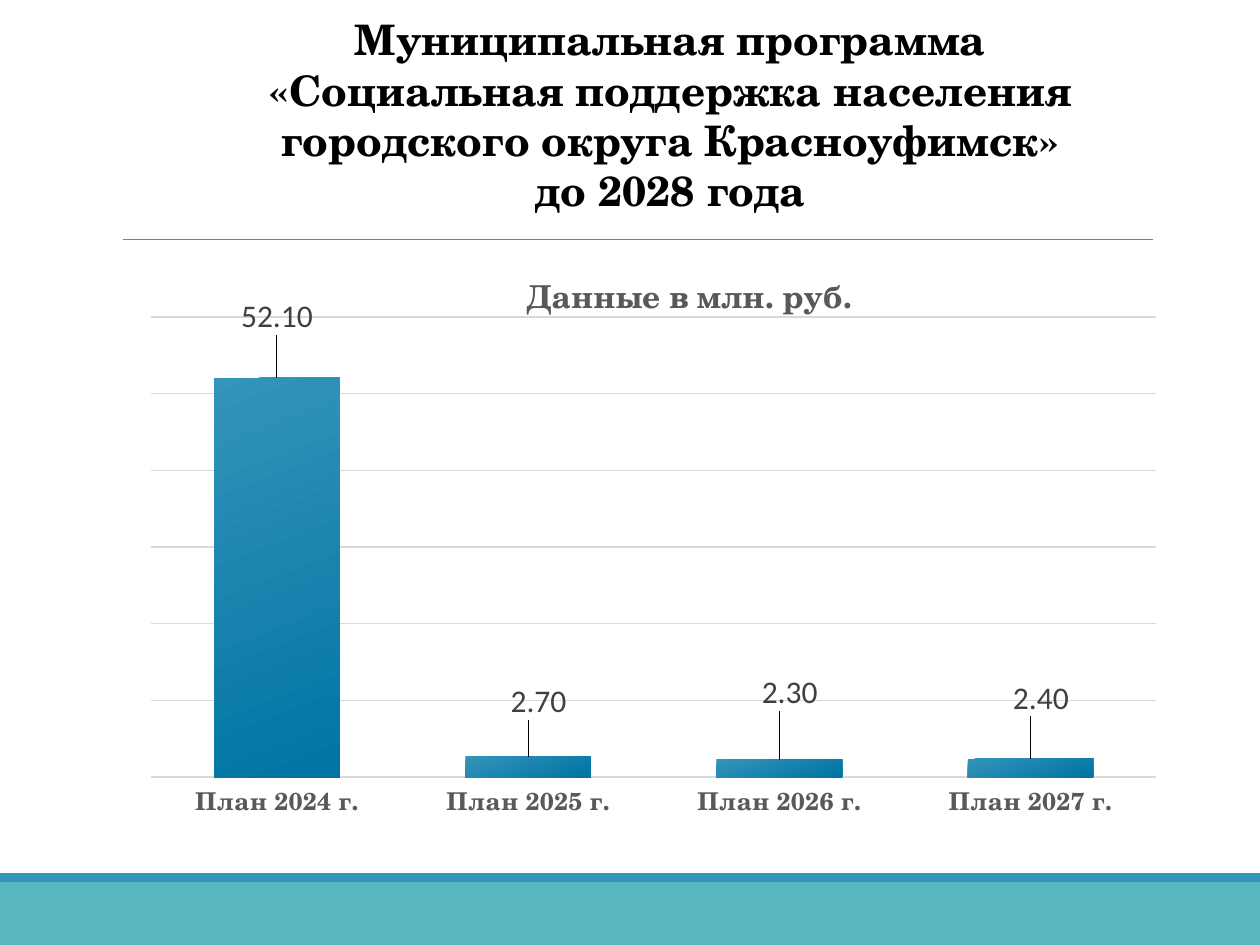
"""Build the social support programme slide with its spending chart."""
from lxml.etree import SubElement
from pptx import Presentation
from pptx.chart.data import CategoryChartData
from pptx.dml.color import RGBColor
from pptx.enum.chart import XL_CHART_TYPE as ChartType, XL_LABEL_POSITION as LabelPosition
from pptx.enum.chart import XL_TICK_MARK as TickMark
from pptx.enum.shapes import MSO_CONNECTOR as Connector, MSO_SHAPE as Shape
from pptx.enum.text import MSO_ANCHOR as Anchor, PP_ALIGN as Align
from pptx.oxml import parse_xml
from pptx.oxml.ns import nsdecls, qn
from pptx.util import Pt

TITLE = [
    "Муниципальная программа",
    "«Социальная поддержка населения",
    "городского округа Красноуфимск»",
    "до 2028 года",
]
CHART_TITLE = "Данные в млн. руб."
SPENDING = [
    ("План 2024 г.", 52.1, (0, -0.06)),
    ("План 2025 г.", 2.7, (0.01, -0.05)),
    ("План 2026 г.", 2.3, (0.01, -0.07)),
    ("План 2027 г.", 2.4, (0.01, -0.06)),
]
NUMBER_FORMAT = "#,##0.00"
THEME = {
    "serif": "TeX Gyre Schola", "sans": "Calibri",
    "black": "000000", "gray": "595959", "label": "404040",
    "grid": "D9D9D9", "rule": "808080", "band": "58B6C0",
    "blue": "3494BA", "deep_blue": "0074A3",
    "title_size": 24, "chart_title_size": 18, "label_size": 18,
    "axis_size": 14, "chart_size": 10,
}
BANDS = [((0, 882, 1260, 63), "band"), ((0, 873, 1260, 9), "blue")]
TITLE_BOX = (184, 6, 973, 217)
CHART_BOX = (115, 244, 1042, 615)
RULE = (123, 239, 1153, 239)
PLOT_AREA = (0.035, 0.119, 0.965, 0.748)
EMU_PER_PX = 914400 / 126


def px(*lengths):
    return [round(length * EMU_PER_PX) for length in lengths]


def color(name):
    return RGBColor.from_string(THEME[name])


def style(font, face, size, color_name, bold=False):
    font.name = THEME[face]
    font.size = Pt(THEME[size])
    font.color.rgb = color(color_name)
    font.bold = bold


def style_line(line, color_name, width):
    line.color.rgb = color(color_name)
    line.width = Pt(width)


def manual_layout(x, y, width=None, height=None):
    layout = parse_xml(f"<c:layout {nsdecls('c')}><c:manualLayout/></c:layout>")
    settings = [("x", x), ("y", y)]
    if width:
        settings = [("layoutTarget", "inner"), ("xMode", "edge"), ("yMode", "edge"),
                    *settings, ("w", width), ("h", height)]
    for tag, value in settings:
        SubElement(layout[0], qn(f"c:{tag}")).set("val", str(value))
    return layout


def edge_layout(x, y):
    layout = manual_layout(x, y)
    for position, tag in enumerate(("xMode", "yMode")):
        mode = SubElement(layout[0], qn(f"c:{tag}"))
        mode.set("val", "edge")
        layout[0].insert(position, mode)
    return layout


def replace_layout(parent, layout, following):
    for old in parent.findall(qn("c:layout")):
        parent.remove(old)
    parent.insert(following, layout)


def add_bands(slide):
    for box, fill in BANDS:
        band = slide.shapes.add_shape(Shape.RECTANGLE, *px(*box))
        band.shadow.inherit = False
        band.fill.solid()
        band.fill.fore_color.rgb = color(fill)
        band.line.fill.background()


def add_rule(slide):
    rule = slide.shapes.add_connector(Connector.STRAIGHT, *px(*RULE))
    style_line(rule.line, "rule", 0.5)
    SubElement(rule.element.spPr, qn("a:effectLst"))


def fill_title(slide):
    title = slide.shapes.title
    title.left, title.top, title.width, title.height = px(*TITLE_BOX)
    frame = title.text_frame
    frame.text = "\n".join(TITLE)
    frame.word_wrap = True
    frame.vertical_anchor = Anchor.MIDDLE
    for paragraph in frame.paragraphs:
        paragraph.alignment = Align.CENTER
        paragraph.space_before = Pt(0)
        style(paragraph.font, "serif", "title_size", "black", True)


def style_axes(chart):
    categories, values = chart.category_axis, chart.value_axis
    categories.major_tick_mark = TickMark.NONE
    style_line(categories.format.line, "grid", 1)
    style(categories.tick_labels.font, "serif", "axis_size", "gray", True)
    values.minimum_scale, values.maximum_scale, values.major_unit = 0, 60, 10
    values.tick_labels.number_format = NUMBER_FORMAT
    values.tick_labels.number_format_is_linked = False
    style_line(values.major_gridlines.format.line, "grid", 0.75)
    values.visible = False


def style_series(plot):
    plot.gap_width, plot.overlap, plot.vary_by_categories = 100, -24, False
    series = plot.series[0]
    fill = series.format.fill
    fill.gradient()
    fill.gradient_angle = 291
    for stop, name in zip(fill.gradient_stops, ("blue", "deep_blue")):
        stop.color.rgb = color(name)
    labels = series.data_labels
    labels.show_value = True
    labels.number_format = NUMBER_FORMAT
    labels.number_format_is_linked = False
    style(labels.font, "sans", "label_size", "label")
    for index, (_, _, offset) in enumerate(SPENDING):
        label = series.points[index].data_label
        style(label.font, "sans", "label_size", "label")
        label.position = LabelPosition.OUTSIDE_END
    for element, (_, _, offset) in zip(labels._element.findall(qn("c:dLbl")), SPENDING):
        replace_layout(element, manual_layout(*offset), 1)
        element.insert(2, parse_xml(
            f'<c:numFmt {nsdecls("c")} formatCode="{NUMBER_FORMAT}" sourceLinked="0"/>'))


def add_spending_chart(slide):
    data = CategoryChartData(number_format=NUMBER_FORMAT)
    data.categories = [category for category, _, _ in SPENDING]
    data.add_series("Series 1", [value for _, value, _ in SPENDING])
    chart = slide.shapes.add_chart(
        ChartType.COLUMN_CLUSTERED, *px(*CHART_BOX), data).chart
    style(chart.font, "serif", "chart_size", "black")
    chart.has_legend = False
    frame = chart.chart_title.text_frame
    frame.text = CHART_TITLE
    style(frame.paragraphs[0].font, "serif", "chart_title_size", "gray", True)
    replace_layout(chart.chart_title._element, edge_layout(0.39, 0.03), 1)
    style_axes(chart)
    style_series(chart.plots[0])
    plot_area = chart.element.find(qn("c:chart")).find(qn("c:plotArea"))
    replace_layout(plot_area, manual_layout(*PLOT_AREA), 0)


def main():
    presentation = Presentation()
    presentation.slide_width, presentation.slide_height = px(1260, 945)
    slide = presentation.slides.add_slide(presentation.slide_layouts[5])
    add_rule(slide)
    add_bands(slide)
    fill_title(slide)
    add_spending_chart(slide)
    presentation.save("out.pptx")


if __name__ == "__main__":
    main()
